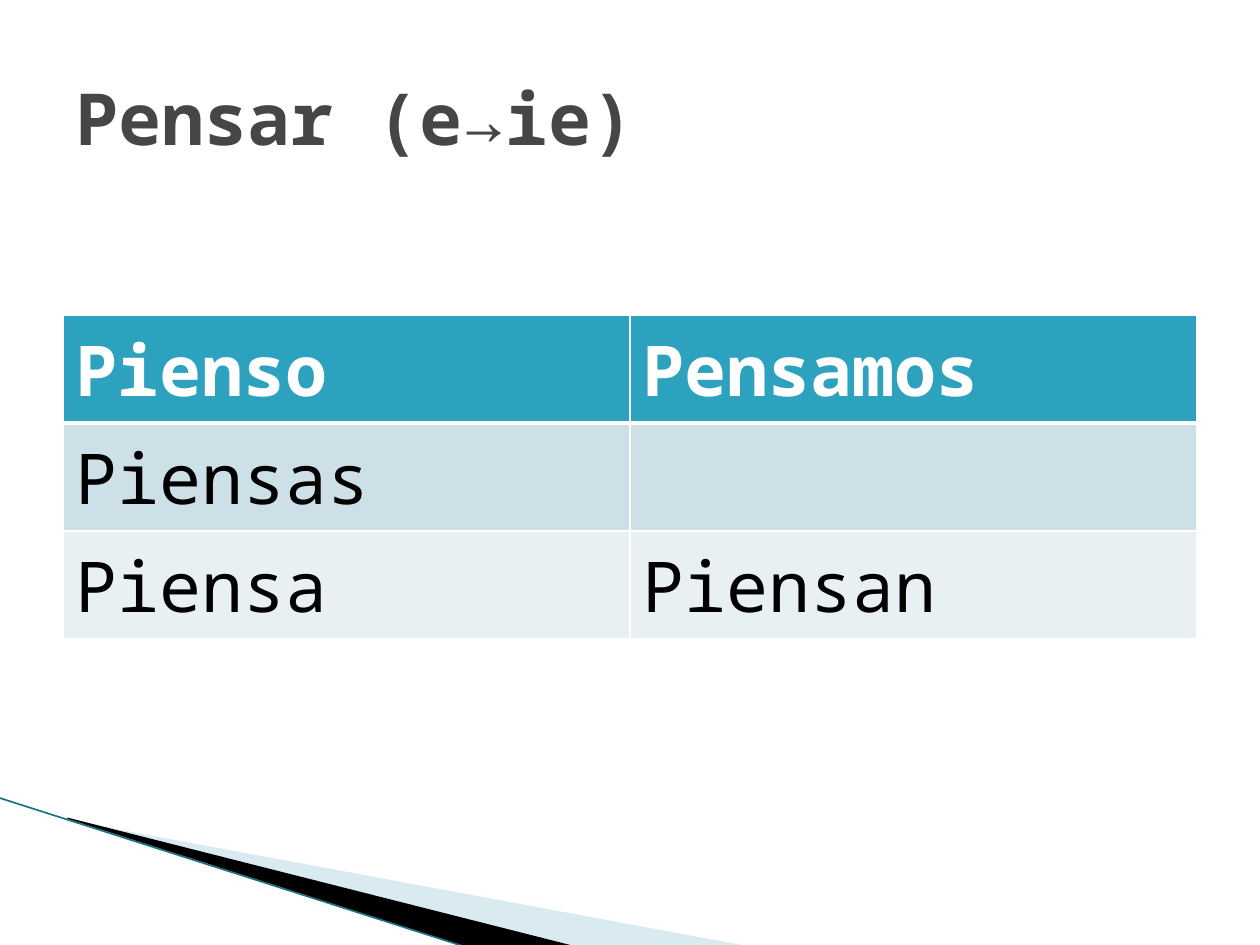
import pptx
import pptx.dml.color
import pptx.enum.shapes
import pptx.enum.text
import pptx.oxml
import pptx.oxml.ns
import pptx.util
from lxml import etree

Cm = pptx.util.Cm
Pt = pptx.util.Pt
qn = pptx.oxml.ns.qn


def rgb(value):
    return pptx.dml.color.RGBColor.from_string(value)


class VerbSlide:
    font_name = "Noto Sans Mono"
    rule_color = "FFFFFF"

    def __init__(self, slide):
        self.slide = slide

    def set_text(self, frame, text, size, color, bold):
        paragraph = frame.paragraphs[0]
        paragraph.text = text
        paragraph.font.name = self.font_name
        paragraph.font.size = Pt(size)
        paragraph.font.bold = bold
        paragraph.font.color.rgb = rgb(color)

    def wedge(self, points, color, opacity=100):
        corners = [(Cm(x), Cm(y)) for x, y in points]
        builder = self.slide.shapes.build_freeform(*corners[0])
        builder.add_line_segments(corners[1:], close=True)
        wedge = builder.convert_to_shape()
        wedge.shadow.inherit = False
        wedge.fill.solid()
        wedge.fill.fore_color.rgb = rgb(color)
        wedge.line.fill.background()
        if opacity < 100:
            tint = wedge._element.spPr.find(qn("a:solidFill")).find(qn("a:srgbClr"))
            etree.SubElement(tint, qn("a:alpha"), val=str(opacity * 1000))

    def line(self, start, end, color, width):
        ends = [Cm(length) for length in (*start, *end)]
        line = self.slide.shapes.add_connector(
            pptx.enum.shapes.MSO_CONNECTOR.STRAIGHT, *ends)
        line.line.color.rgb = rgb(color)
        line.line.width = Pt(width)
        etree.SubElement(line._element.spPr, qn("a:effectLst"))

    def title(self, text, left, top, width, height):
        box = self.slide.shapes.add_textbox(Cm(left), Cm(top), Cm(width), Cm(height))
        box.text_frame.word_wrap = True
        box.text_frame.vertical_anchor = pptx.enum.text.MSO_ANCHOR.MIDDLE
        self.set_text(box.text_frame, text, 41, "464646", True)

    def border(self, cell, bottom):
        properties = cell._tc.get_or_add_tcPr()
        for side, width in (("L", 1), ("R", 1), ("T", 1), ("B", bottom)):
            edge = etree.SubElement(properties, qn("a:ln" + side), w=str(int(Pt(width))))
            fill = etree.SubElement(edge, qn("a:solidFill"))
            etree.SubElement(fill, qn("a:srgbClr"), val=self.rule_color)

    def table(self, rows, fills, left, top, width, row_height):
        table = self.slide.shapes.add_table(
            len(rows), len(rows[0]), Cm(left), Cm(top), Cm(width),
            Cm(row_height * len(rows))).table
        for row_index, (words, fill) in enumerate(zip(rows, fills)):
            header = row_index == 0
            for column_index, word in enumerate(words):
                cell = table.cell(row_index, column_index)
                self.border(cell, 3 if header else 1)
                cell.fill.solid()
                cell.fill.fore_color.rgb = rgb(fill)
                self.set_text(cell.text_frame, word, 40,
                              "FFFFFF" if header else "000000", header)


def main():
    deck = pptx.Presentation()
    deck.slide_width = Cm(25.4)
    deck.slide_height = Cm(19.05)
    page = VerbSlide(deck.slides.add_slide(deck.slide_layouts[6]))

    page.wedge([(1.4, 16.54), (15.11, 19.08), (11.58, 19.08), (1.4, 16.51)],
               "A0CBDC", 40)
    page.wedge([(1.35, 16.48), (11.61, 19.08), (9.45, 19.1), (1.37, 16.51)], "000000")
    page.line((-0.03, 16.08), (9.42, 19.1), "1B7287", 0.95)

    conjugation = [("Pienso", "Pensamos"), ("Piensas", ""), ("Piensa", "Piensan")]
    page.table(conjugation, ["2DA2BF", "CDE0E8", "E8F0F4"], 1.27, 6.35, 22.86, 2.16)
    page.title("Pensar (e→ie)", 1.27, 0.76, 22.86, 3.18)

    deck.save("out.pptx")


if __name__ == "__main__":
    main()
